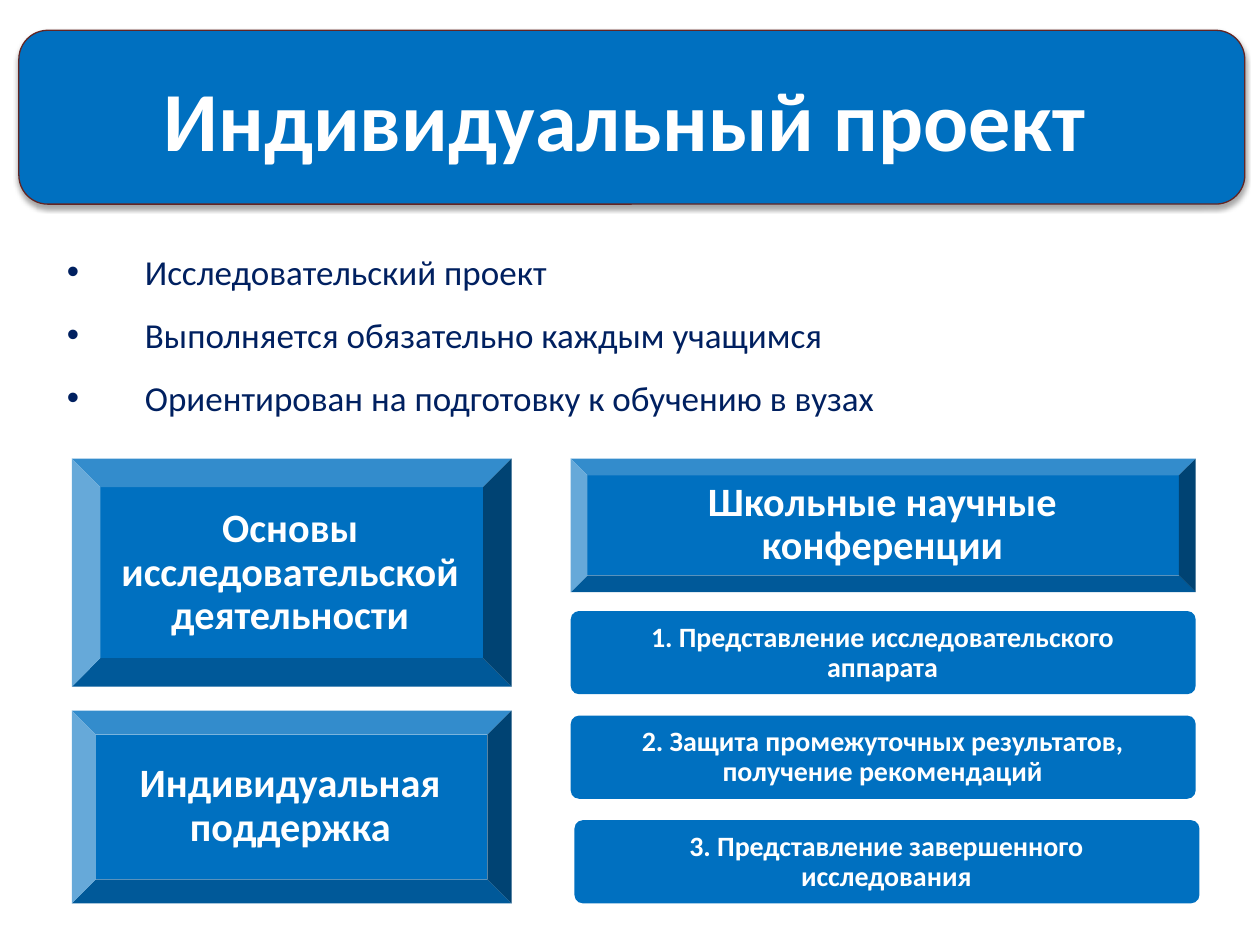
import pptx
import pptx.util
import pptx.dml.color
import pptx.enum.shapes
import pptx.enum.text
import pptx.oxml
import pptx.oxml.ns

Inches = pptx.util.Inches
Pt = pptx.util.Pt
RGBColor = pptx.dml.color.RGBColor
SHAPE = pptx.enum.shapes.MSO_SHAPE
ALIGN = pptx.enum.text.PP_ALIGN
ANCHOR = pptx.enum.text.MSO_ANCHOR

BLUE = RGBColor(0x00, 0x70, 0xC0)
NAVY = RGBColor(0x00, 0x20, 0x60)
MAROON = RGBColor(0x63, 0x25, 0x23)
WHITE = RGBColor(0xFF, 0xFF, 0xFF)

AIMS = [
    "Исследовательский проект",
    "Выполняется обязательно каждым учащимся",
    "Ориентирован на подготовку к обучению в вузах",
]
# Text, panel box, label box
PANELS = [
    ("Основы исследовательской деятельности",
     (0.57, 3.64, 3.49, 1.81), (0.84, 3.87, 2.93, 1.36)),
    ("Индивидуальная поддержка",
     (0.57, 5.64, 3.49, 1.53), (0.84, 5.83, 2.93, 1.14)),
    ("Школьные научные конференции",
     (4.53, 3.64, 4.96, 1.06), (4.92, 3.77, 4.17, 0.79)),
]
# Text, left edge
STAGES = [
    ("1. Представление исследовательского аппарата", 4.53),
    ("2. Защита промежуточных результатов, получение рекомендаций", 4.53),
    ("3. Представление завершенного исследования", 4.56),
]
STAGE_TOP, STAGE_STEP = 4.85, 0.83


def place(shape, box):
    shape.left, shape.top, shape.width, shape.height = map(Inches, box)


def write(frame, lines, size, color=WHITE, bold=True, align=ALIGN.CENTER,
          anchor=ANCHOR.MIDDLE, line_spacing=1.0, space=0, margin=None):
    """Fill a text frame with one paragraph per line."""
    frame.word_wrap = True
    frame.auto_size = pptx.enum.text.MSO_AUTO_SIZE.NONE
    frame.vertical_anchor = anchor
    if margin is not None:
        frame.margin_left = frame.margin_right = Inches(margin)
        frame.margin_top = frame.margin_bottom = Inches(margin)
    frame.text = "\n".join(lines)
    for paragraph in frame.paragraphs:
        paragraph.alignment = align
        paragraph.line_spacing = line_spacing
        paragraph.space_before = paragraph.space_after = Pt(space)
        font = paragraph.runs[0].font
        font.name, font.size, font.bold = "Calibri", Pt(size), bold
        font.color.rgb = color


def add_block(shapes, kind, box, corner=None):
    block = shapes.add_shape(kind, *map(Inches, box))
    block.shadow.inherit = False
    block.fill.solid()
    block.fill.fore_color.rgb = BLUE
    block.line.fill.background()
    if corner is not None:
        block.adjustments[0] = corner
    return block


def add_labelled_block(slide, kind, box, label_box, text, size, margin, corner=None):
    group = slide.shapes.add_group_shape()
    add_block(group.shapes, kind, box, corner)
    label = group.shapes.add_textbox(*map(Inches, label_box))
    write(label.text_frame, [text], size, line_spacing=0.9, margin=margin)


def add_banner(slide):
    banner = add_block(slide.shapes, SHAPE.ROUNDED_RECTANGLE, (0.15, 0.24, 9.73, 1.38))
    banner.line.color.rgb = MAROON
    banner.line.width = Pt(0.75)
    effects = banner._element.spPr.find(pptx.oxml.ns.qn("a:effectLst"))
    effects.append(pptx.oxml.parse_xml(
        f'<a:outerShdw {pptx.oxml.ns.nsdecls("a")} blurRad="{Pt(3.1)}" '
        f'dist="{Pt(1.8)}" dir="5400000" rotWithShape="0">'
        '<a:srgbClr val="000000"><a:alpha val="35000"/></a:srgbClr></a:outerShdw>'))
    # Send behind the title
    slide.shapes._spTree.insert(2, banner._element)


def add_aims(body):
    place(body, (0.43, 1.94, 7.07, 1.45))
    write(body.text_frame, AIMS, 20, color=NAVY, bold=False, align=ALIGN.JUSTIFY,
          anchor=ANCHOR.TOP, space=6)
    for paragraph in body.text_frame.paragraphs:
        properties = paragraph._p.get_or_add_pPr()
        properties.set("marL", str(Inches(0.62)))
        properties.set("indent", str(Inches(-0.62)))


def main():
    deck = pptx.Presentation()
    deck.slide_width, deck.slide_height = Inches(10), Inches(7.5)
    slide = deck.slides.add_slide(deck.slide_layouts[1])

    # Heading
    add_banner(slide)
    title = slide.shapes.title
    place(title, (0.43, 0.48, 9.06, 0.91))
    write(title.text_frame, ["Индивидуальный проект"], 48)

    # Bulleted aims
    add_aims(slide.placeholders[1])

    # Bevelled panels
    for text, box, label_box in PANELS:
        add_labelled_block(slide, SHAPE.BEVEL, box, label_box, text, 23, 0.1)

    # Conference stages
    for index, (text, left) in enumerate(STAGES):
        top = STAGE_TOP + index * STAGE_STEP
        add_labelled_block(slide, SHAPE.ROUNDED_RECTANGLE, (left, top, 4.96, 0.66),
                           (left + 0.14, top + 0.02, 4.67, 0.63), text, 16, 0.07,
                           corner=0.1)

    deck.save("out.pptx")


if __name__ == "__main__":
    main()
